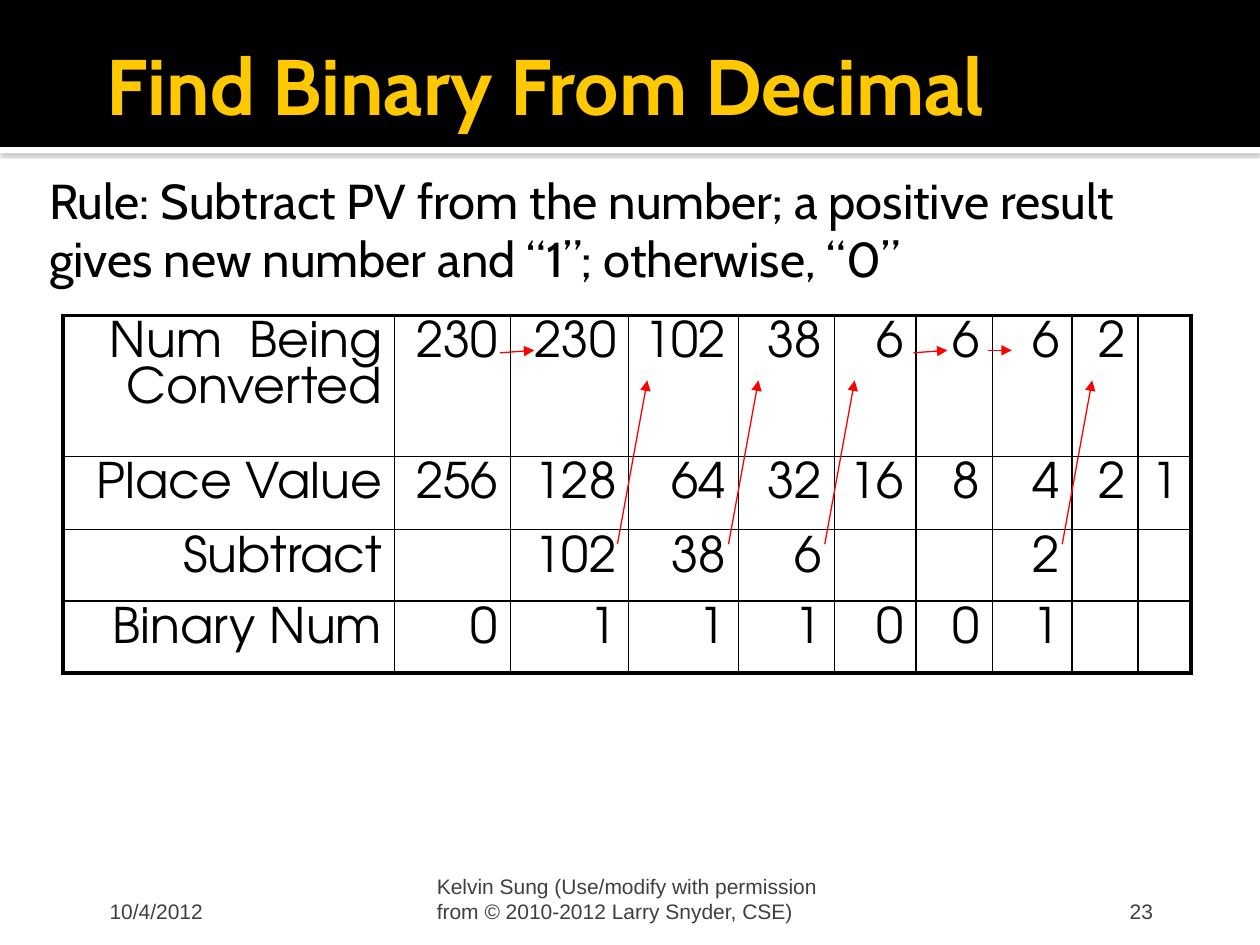
import pptx
import pptx.util
import pptx.dml.color
import pptx.enum.shapes
import pptx.enum.text
import pptx.oxml
import pptx.oxml.ns

Pt = pptx.util.Pt
ALIGN = pptx.enum.text.PP_ALIGN
ANCHOR = pptx.enum.text.MSO_ANCHOR
NS = pptx.oxml.ns.nsdecls("a")

COLORS = {"black": "000000", "white": "FFFFFF", "gold": "FFC800",
          "grey": "3F3F3F", "arrow": "FF0000", "shadow": "808080"}

FOOTER = {"size": 12, "font": "Arial", "color": "grey", "anchor": ANCHOR.BOTTOM}
TEXTS = [
    {"text": "Find Binary From Decimal", "box": (54, 12.24, 612, 72),
     "insets": (7.2, 3.6, 3.6, 3.6), "size": 45, "font": "Cabin",
     "color": "gold", "bold": True, "anchor": ANCHOR.MIDDLE},
    {"text": "Rule: Subtract PV from the number; a positive result gives "
             "new number and “1”; otherwise, “0”",
     "box": (23.76, 90, 672.48, 324), "insets": (4.32, 7.2, 7.2, 3.6),
     "size": 28, "font": "Cabin", "color": "black", "anchor": ANCHOR.TOP},
    {"text": "10/4/2012", "box": (54, 492, 150, 36),
     "insets": (8.64, 3.6, 3.6, 0), **FOOTER},
    {"text": "Kelvin Sung (Use/modify with permission from "
             "© 2010-2012 Larry Snyder, CSE)",
     "box": (246, 492, 228, 36), "insets": (3.6, 3.6, 3.6, 0), **FOOTER},
    {"text": "23", "box": (516, 492, 150, 36), "insets": (7.2, 3.6, 7.2, 0),
     "align": ALIGN.RIGHT, **FOOTER},
]

CONVERSION = [
    ["Num  Being Converted", "230", "230", "102", "38", "6", "6", "6", "2", ""],
    ["Place Value", "256", "128", "64", "32", "16", "8", "4", "2", "1"],
    ["Subtract", "", "102", "38", "6", "", "", "2", "", ""],
    ["Binary Num", "0", "1", "1", "1", "0", "0", "1", "", ""],
]
COLUMN_WIDTHS = [189.5, 66.3, 67.5, 62.8, 54.8, 46.7, 43.5, 45.5, 37.7, 30.5]
ROW_HEIGHTS = [80.6, 41.8, 40.2, 41]
TABLE_LEFT, TABLE_TOP = 36, 180.3

CARRIED = [(285.8, 201.6, 305.3, 200.2), (522, 201.6, 541.4, 200.2),
           (564.5, 200.2, 578.2, 200.2)]
REMAINDER_STARTS = [352.8, 416.3, 471.3, 607]
REMAINDERS = [(x, 311, x + 17.1, 217.4) for x in REMAINDER_STARTS]


def rgb(name):
    return pptx.dml.color.RGBColor.from_string(COLORS[name])


def style(paragraph, size, font, color, bold=False):
    for run in paragraph.runs:
        run.font.size = Pt(size)
        run.font.name = font
        run.font.bold = bold
        run.font.color.rgb = rgb(color)


def add_band(slide, top, height, color):
    band = slide.shapes.add_shape(pptx.enum.shapes.MSO_SHAPE.RECTANGLE,
                                  0, Pt(top), Pt(720), Pt(height))
    band.shadow.inherit = False
    band.fill.solid()
    band.fill.fore_color.rgb = rgb(color)
    band.line.fill.background()
    return band


def add_header(slide):
    stripe = add_band(slide, 84, 3.6, "white")
    effects = stripe.element.spPr.find(pptx.oxml.ns.qn("a:effectLst"))
    effects.append(pptx.oxml.parse_xml(
        f'<a:outerShdw {NS} blurRad="{Pt(2.5)}" dist="{Pt(0.8)}" dir="5400000">'
        f'<a:srgbClr val="{COLORS["shadow"]}"><a:alpha val="60000"/></a:srgbClr>'
        '</a:outerShdw>'))
    add_band(slide, 0, 84, "black")


def add_text(slide, item):
    frame = slide.shapes.add_textbox(*map(Pt, item["box"])).text_frame
    frame.word_wrap = True
    frame.vertical_anchor = item["anchor"]
    (frame.margin_left, frame.margin_top,
     frame.margin_right, frame.margin_bottom) = map(Pt, item["insets"])
    frame.text = item["text"]
    paragraph = frame.paragraphs[0]
    paragraph.alignment = item.get("align", ALIGN.LEFT)
    style(paragraph, item["size"], item["font"], item["color"],
          item.get("bold", False))


def set_borders(cell, outer_edges):
    properties = cell._tc.get_or_add_tcPr()
    for index, (side, outer) in enumerate(zip("LRTB", outer_edges)):
        width = Pt(2.25 if outer else 1)
        properties.insert(index, pptx.oxml.parse_xml(
            f'<a:ln{side} {NS} w="{width}"><a:solidFill>'
            f'<a:srgbClr val="{COLORS["black"]}"/></a:solidFill></a:ln{side}>'))


def add_conversion_table(slide):
    rows, columns = len(ROW_HEIGHTS), len(COLUMN_WIDTHS)
    table = slide.shapes.add_table(
        rows, columns, Pt(TABLE_LEFT), Pt(TABLE_TOP),
        Pt(sum(COLUMN_WIDTHS)), Pt(sum(ROW_HEIGHTS))).table
    table.first_row = table.horz_banding = False
    for column, width in zip(table.columns, COLUMN_WIDTHS):
        column.width = Pt(width)
    for row, height in zip(table.rows, ROW_HEIGHTS):
        row.height = Pt(height)
    for r, values in enumerate(CONVERSION):
        for c, value in enumerate(values):
            cell = table.cell(r, c)
            cell.fill.background()
            set_borders(cell, (c == 0, c == columns - 1, r == 0, r == rows - 1))
            paragraph = cell.text_frame.paragraphs[0]
            paragraph.text = value
            paragraph.alignment = ALIGN.RIGHT
            paragraph._p.get_or_add_pPr().append(pptx.oxml.parse_xml(
                f'<a:spcBef {NS}><a:spcPct val="20000"/></a:spcBef>'))
            style(paragraph, 28, "TeX Gyre Adventor", "black")


def add_arrow(slide, ends):
    arrow = slide.shapes.add_connector(
        pptx.enum.shapes.MSO_CONNECTOR.STRAIGHT, *map(Pt, ends))
    arrow.line.color.rgb = rgb("arrow")
    arrow.line.width = Pt(0.75)
    arrow.line._get_or_add_ln().append(
        pptx.oxml.parse_xml(f'<a:tailEnd {NS} type="triangle"/>'))
    arrow._element.spPr.append(pptx.oxml.parse_xml(f'<a:effectLst {NS}/>'))


def main():
    presentation = pptx.Presentation()
    presentation.slide_width, presentation.slide_height = Pt(720), Pt(540)
    slide = presentation.slides.add_slide(presentation.slide_layouts[6])
    add_header(slide)
    for item in TEXTS:
        add_text(slide, item)
    add_conversion_table(slide)
    for ends in CARRIED + REMAINDERS:
        add_arrow(slide, ends)
    presentation.save("out.pptx")


if __name__ == "__main__":
    main()
